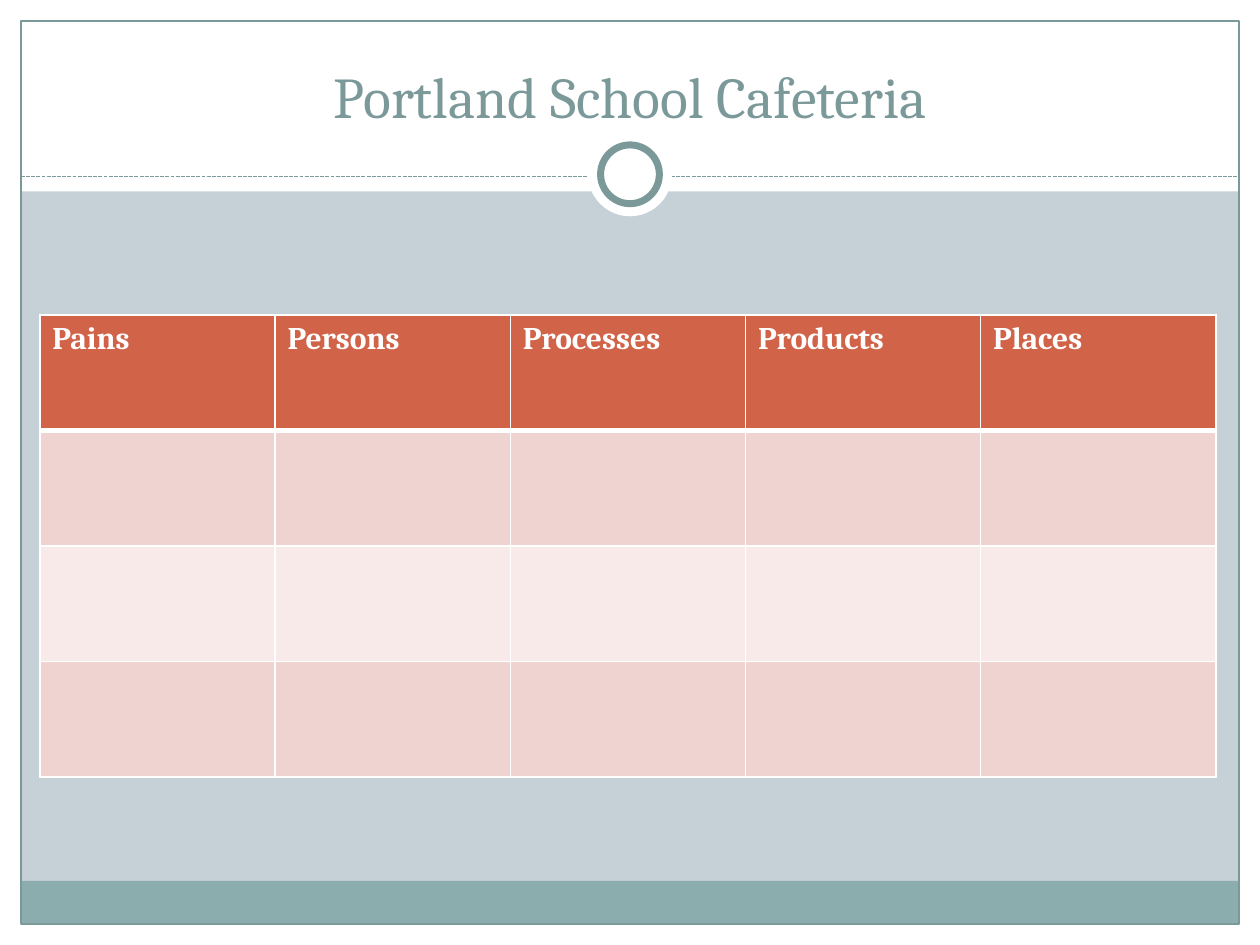
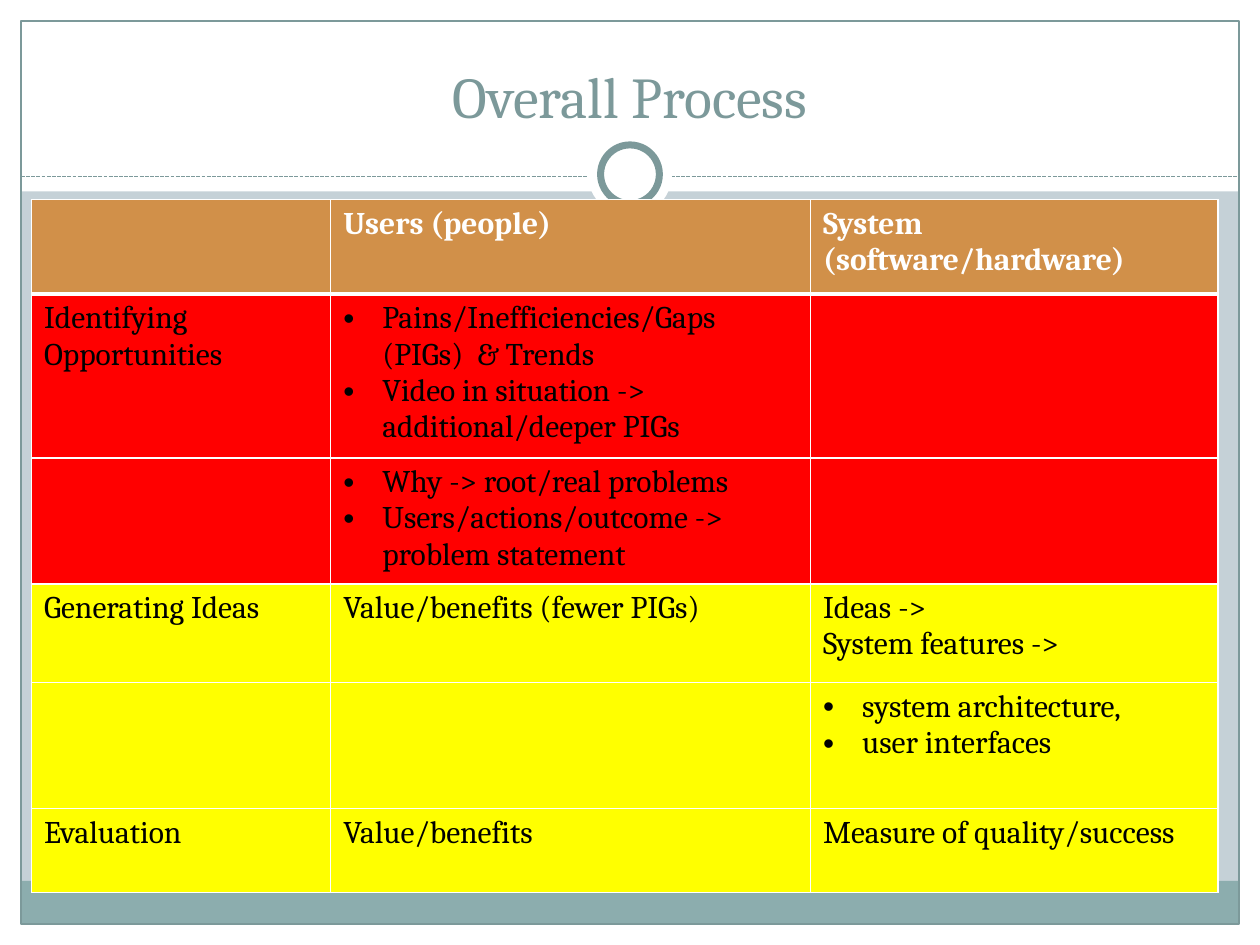
import pptx
import pptx.dml.color
import pptx.enum.dml
import pptx.enum.shapes
import pptx.enum.text
import pptx.oxml.ns
import pptx.util
from lxml import etree

RGBColor = pptx.dml.color.RGBColor
Shape = pptx.enum.shapes.MSO_SHAPE
qn = pptx.oxml.ns.qn

WHITE = RGBColor(0xFF, 0xFF, 0xFF)
BLACK = RGBColor(0x00, 0x00, 0x00)
MIST = RGBColor(0xC5, 0xD1, 0xD7)
TEAL = RGBColor(0x8C, 0xAD, 0xAE)
SLATE = RGBColor(0x7C, 0x99, 0x9A)
BRICK = RGBColor(0xD1, 0x63, 0x49)
ROSE = RGBColor(0xEE, 0xD3, 0xD0)
BLUSH = RGBColor(0xF7, 0xEA, 0xE9)
OCHRE = RGBColor(0xD1, 0x90, 0x49)
RED = RGBColor(0xFF, 0x00, 0x00)
YELLOW = RGBColor(0xFF, 0xFF, 0x00)

COLUMNS, ROWS = 120, 90
UNIT = pptx.util.Inches(10) // COLUMNS
MARGIN = 2
HEADER_HEIGHT = 18.24
RULE_TOP = 16.8
BULLET = "• "
BULLET_INDENT = pptx.util.Inches(0.31)

TITLE_FONT = {"name": "Cambria", "size": pptx.util.Pt(33)}
HEADER_FONT = {"name": "Cambria", "size": pptx.util.Pt(18), "bold": True}
BODY_FONT = {**HEADER_FONT, "bold": False}


def grid(*values):
    """Turn grid units into slide lengths."""
    return [round(value * UNIT) for value in values]


def set_format(target, values):
    for name, value in values.items():
        setattr(target, name, value)


class Deck:
    def __init__(self):
        self.presentation = pptx.Presentation()
        set_format(self.presentation, {"slide_width": COLUMNS * UNIT,
                                       "slide_height": ROWS * UNIT})
        self.slide = None

    def new_slide(self, title):
        self.slide = self.presentation.slides.add_slide(self.presentation.slide_layouts[6])
        background = self.slide.background.fill
        background.solid()
        background.fore_color.rgb = MIST
        self.frame()
        self.title(title)

    def frame(self):
        inner_width = COLUMNS - 2 * MARGIN
        bottom = ROWS - MARGIN
        for area in ((0, bottom, COLUMNS, MARGIN),
                     (0, 0, COLUMNS, HEADER_HEIGHT),
                     (0, 0, MARGIN, ROWS),
                     (COLUMNS - MARGIN, 0, MARGIN, ROWS)):
            self.shape(Shape.RECTANGLE, area, WHITE)
        self.shape(Shape.RECTANGLE, (MARGIN, bottom - 4.1, inner_width, 4.1), TEAL)
        self.shape(Shape.RECTANGLE, (MARGIN, MARGIN, inner_width, ROWS - 2 * MARGIN), line_width=0.75)
        self.dashed_line(MARGIN, COLUMNS - MARGIN, RULE_TOP)
        self.circle(8, WHITE)
        self.circle(5.6, WHITE, line_width=4)

    def shape(self, kind, area, fill=None, line_width=None):
        shape = self.slide.shapes.add_shape(kind, *grid(*area))
        shape.shadow.inherit = False
        if fill is None:
            shape.fill.background()
        else:
            shape.fill.solid()
            shape.fill.fore_color.rgb = fill
        if line_width is None:
            shape.line.fill.background()
        else:
            shape.line.color.rgb = SLATE
            shape.line.width = pptx.util.Pt(line_width)

    def circle(self, size, fill, line_width=None):
        """Draw a circle on the middle of the header rule."""
        area = ((COLUMNS - size) / 2, RULE_TOP - 0.2 - size / 2, size, size)
        self.shape(Shape.OVAL, area, fill, line_width)

    def dashed_line(self, left, right, top):
        line = self.slide.shapes.add_connector(
            pptx.enum.shapes.MSO_CONNECTOR.STRAIGHT, *grid(left, top, right, top))
        line.line.color.rgb = SLATE
        set_format(line.line, {"width": pptx.util.Pt(0.75),
                               "dash_style": pptx.enum.dml.MSO_LINE.SQUARE_DOT})
        etree.SubElement(line.element.spPr, qn("a:effectLst"))

    def title(self, text):
        frame = self.slide.shapes.add_textbox(*grid(4, 3, 112, 10)).text_frame
        set_format(frame, {"word_wrap": True,
                           "vertical_anchor": pptx.enum.text.MSO_ANCHOR.BOTTOM})
        paragraph = frame.paragraphs[0]
        paragraph.alignment = pptx.enum.text.PP_ALIGN.CENTER
        self.add_text(paragraph, text, TITLE_FONT, SLATE)

    def add_text(self, paragraph, text, font, color):
        run = paragraph.add_run()
        run.text = text
        set_format(run.font, font)
        run.font.color.rgb = color

    def table(self, left, top, widths, heights, texts, fills):
        """Add a table whose first row is the header; fills holds one colour a row."""
        area = grid(left, top, sum(widths), sum(heights))
        table = self.slide.shapes.add_table(len(heights), len(widths), *area).table
        for column, width in zip(table.columns, grid(*widths)):
            column.width = width
        for index, (row, height) in enumerate(zip(table.rows, grid(*heights))):
            row.height = height
            for cell, text in zip(row.cells, texts[index]):
                self.cell(cell, text, fills[index], index)

    def cell(self, cell, text, fill, row):
        cell.fill.solid()
        cell.fill.fore_color.rgb = fill
        self.borders(cell, top=3 if row == 1 else 1, bottom=3 if row == 0 else 1)
        font, color = (HEADER_FONT, WHITE) if row == 0 else (BODY_FONT, BLACK)
        frame = cell.text_frame
        for index, line in enumerate(text.split("\n") if text else []):
            paragraph = frame.add_paragraph() if index else frame.paragraphs[0]
            if line.startswith(BULLET):
                self.bullet(paragraph)
            self.add_text(paragraph, line.removeprefix(BULLET), font, color)

    def bullet(self, paragraph):
        properties = paragraph._p.get_or_add_pPr()
        properties.set("marL", str(BULLET_INDENT))
        properties.set("indent", str(-BULLET_INDENT))
        etree.SubElement(properties, qn("a:buFont"), typeface="Arial")
        etree.SubElement(properties, qn("a:buChar"), char=BULLET.strip())

    def borders(self, cell, top, bottom):
        properties = cell._tc.get_or_add_tcPr()
        widths = {"a:lnL": 1, "a:lnR": 1, "a:lnT": top, "a:lnB": bottom}
        for position, (tag, width) in enumerate(widths.items()):
            border = etree.Element(qn(tag), w=str(pptx.util.Pt(width)))
            fill = etree.SubElement(border, qn("a:solidFill"))
            etree.SubElement(fill, qn("a:srgbClr"), val=str(WHITE))
            properties.insert(position, border)


def cafeteria_slide(deck):
    deck.new_slide("Portland School Cafeteria")
    headings = ["Pains", "Persons", "Processes", "Products", "Places"]
    empty_row = [""] * len(headings)
    deck.table(3.8, 30, [22.4] * len(headings), [11] * 4,
               [headings] + [empty_row] * 3, [BRICK, ROSE, BLUSH, ROSE])


def process_slide(deck):
    deck.new_slide("Overall Process")
    texts = [
        ["", "Users (people)", "System (software/hardware)"],
        ["Identifying Opportunities",
         "• Pains/Inefficiencies/Gaps (PIGs)  & Trends\n"
         "• Video in situation -> additional/deeper PIGs", ""],
        ["", "• Why -> root/real problems\n"
         "• Users/actions/outcome -> problem statement", ""],
        ["Generating Ideas", "Value/benefits (fewer PIGs)", "Ideas ->\nSystem features ->"],
        ["", "", "• system architecture,\n• user interfaces"],
        ["Evaluation", "Value/benefits", "Measure of quality/success"],
    ]
    deck.table(3, 19, [28.5, 45.7, 38.8], [9, 15.1, 11.6, 9.4, 12, 8], texts,
               [OCHRE] + [RED] * 2 + [YELLOW] * 3)


def main():
    deck = Deck()
    cafeteria_slide(deck)
    process_slide(deck)
    deck.presentation.save("out.pptx")


if __name__ == "__main__":
    main()
